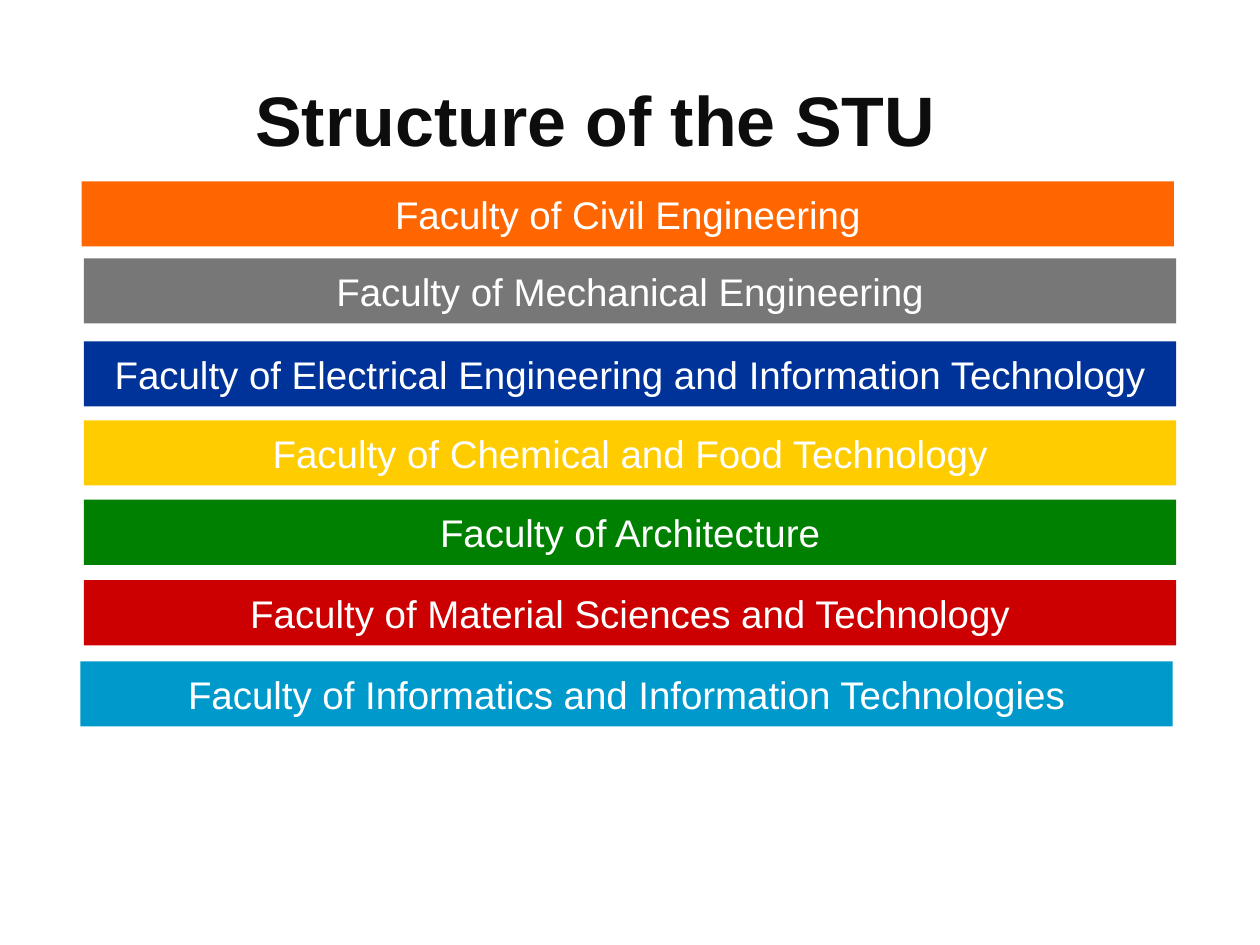
from pptx import Presentation
from pptx.dml.color import RGBColor
from pptx.enum.shapes import MSO_SHAPE
from pptx.enum.text import MSO_ANCHOR, MSO_AUTO_SIZE, PP_ALIGN
from pptx.util import Pt

RECTANGLE = MSO_SHAPE.RECTANGLE
MIDDLE = MSO_ANCHOR.MIDDLE
NO_AUTOFIT = MSO_AUTO_SIZE.NONE
CENTER = PP_ALIGN.CENTER

FONT = "Arial"
TITLE_ONLY = 5
BLACK = RGBColor(0x0D, 0x0D, 0x0D)
WHITE = RGBColor(0xFF, 0xFF, 0xFF)
ORANGE = RGBColor(0xFF, 0x66, 0x00)
GRAY = RGBColor(0x77, 0x77, 0x77)
BLUE = RGBColor(0x00, 0x33, 0x99)
YELLOW = RGBColor(0xFF, 0xCC, 0x00)
GREEN = RGBColor(0x00, 0x80, 0x00)
RED = RGBColor(0xCC, 0x00, 0x00)
CYAN = RGBColor(0x00, 0x99, 0xCC)

BAR_WIDTH, BAR_HEIGHT = 624.2, 37.2
# Name, colour, left and top relative to the list's corner
FACULTIES = [
    ("Faculty of Civil Engineering", ORANGE, 0.7, 0),
    ("Faculty of Mechanical Engineering", GRAY, 2, 44),
    ("Faculty of Electrical Engineering and Information Technology", BLUE, 2, 91.5),
    ("Faculty of Chemical and Food Technology", YELLOW, 2, 136.7),
    ("Faculty of Architecture", GREEN, 2, 182),
    ("Faculty of Material Sciences and Technology", RED, 2, 228),
    ("Faculty of Informatics and Information Technologies", CYAN, 0, 274.3),
]


def set_text(sp, text, size, color, bold=False):
    tf = sp.text_frame
    tf.text = text
    tf.word_wrap = False
    tf.auto_size = NO_AUTOFIT
    tf.vertical_anchor = MIDDLE
    p = tf.paragraphs[0]
    p.alignment = CENTER
    font = p.runs[0].font
    font.name = FONT
    font.size = Pt(size)
    font.bold = bold
    font.color.rgb = color


def add_title(s, left, top, width, height):
    sp = s.shapes.title
    sp.left, sp.top, sp.width, sp.height = Pt(left), Pt(top), Pt(width), Pt(height)
    set_text(sp, "Structure of the STU", 40, BLACK, bold=True)


def add_faculty_bars(s, left, top):
    for name, color, dx, dy in FACULTIES:
        sp = s.shapes.add_shape(RECTANGLE, Pt(left + dx), Pt(top + dy),
                                Pt(BAR_WIDTH), Pt(BAR_HEIGHT))
        sp.shadow.inherit = False
        sp.fill.solid()
        sp.fill.fore_color.rgb = color
        sp.line.fill.background()
        set_text(sp, name, 22, WHITE)


def main():
    prs = Presentation()
    prs.slide_width, prs.slide_height = Pt(720), Pt(540)
    s = prs.slides.add_slide(prs.slide_layouts[TITLE_ONLY])
    add_title(s, 136.8, 40.3, 406.8, 55.4)
    add_faculty_bars(s, 46, 103.6)
    prs.save("out.pptx")


if __name__ == "__main__":
    main()
